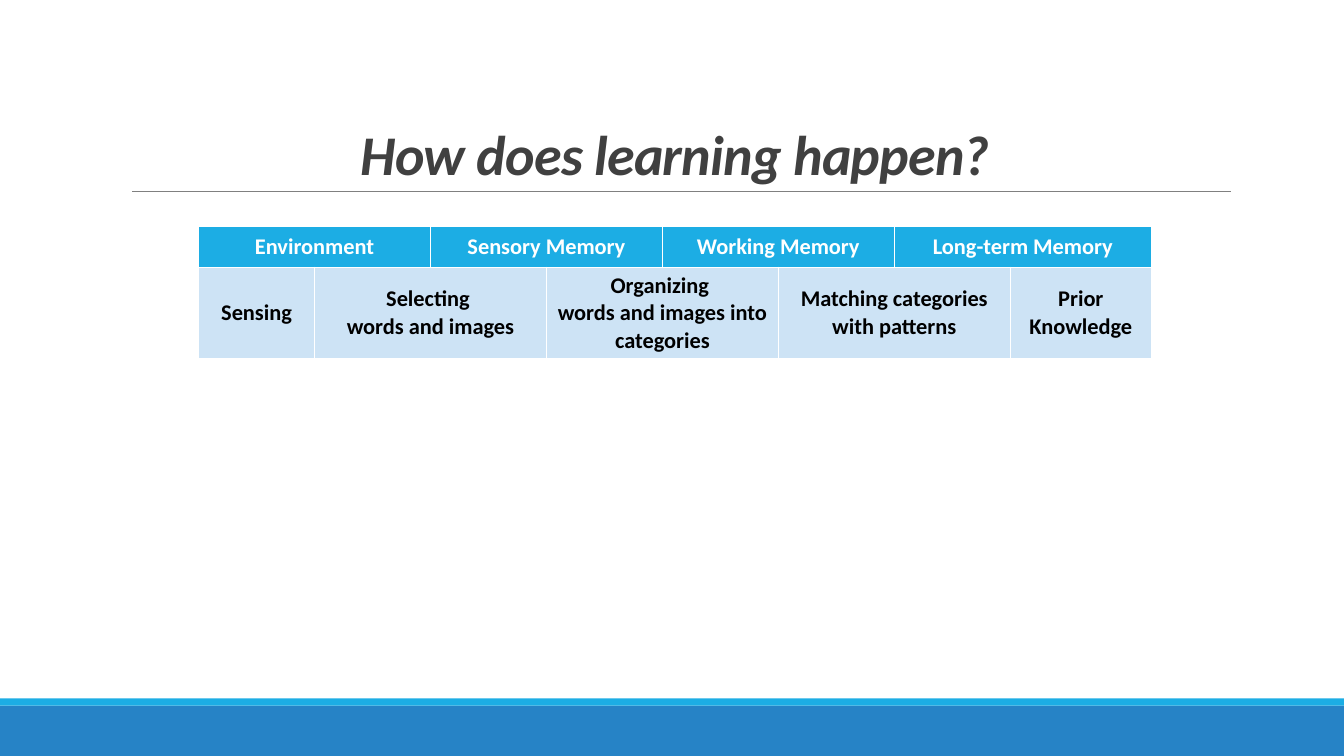
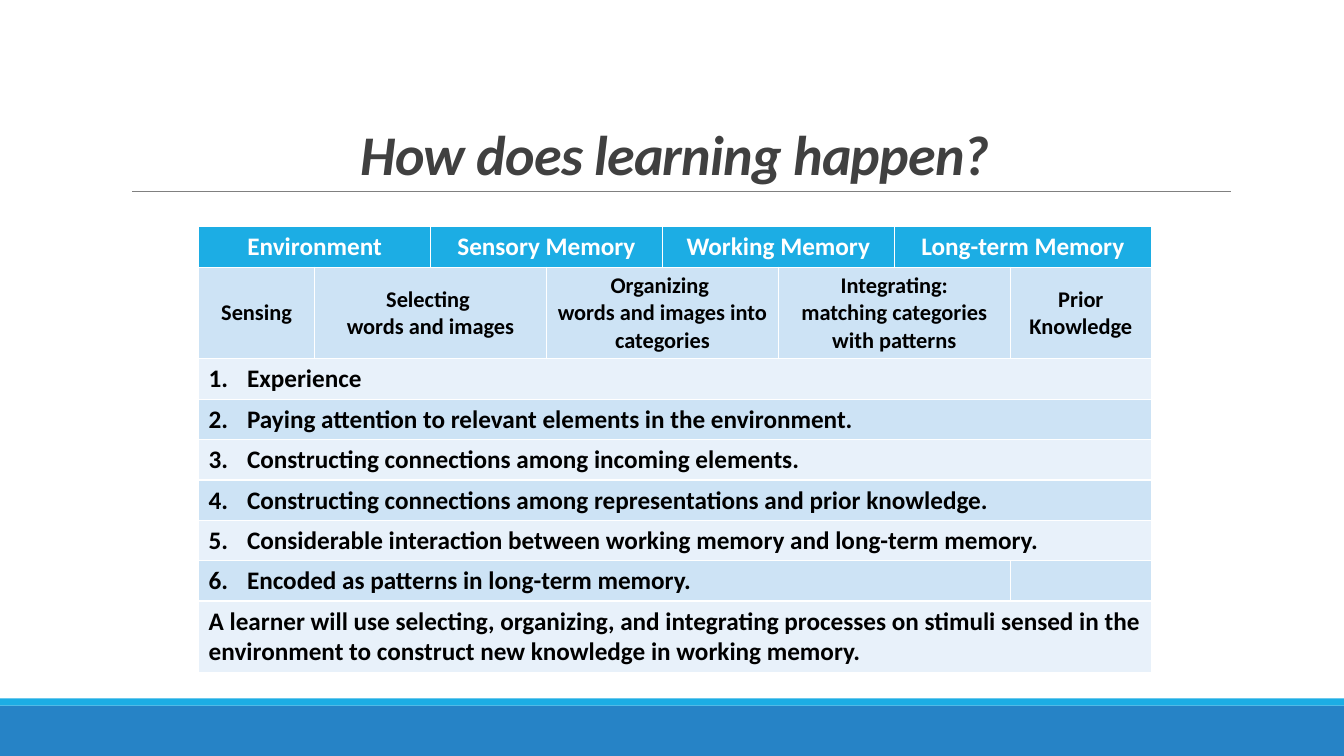
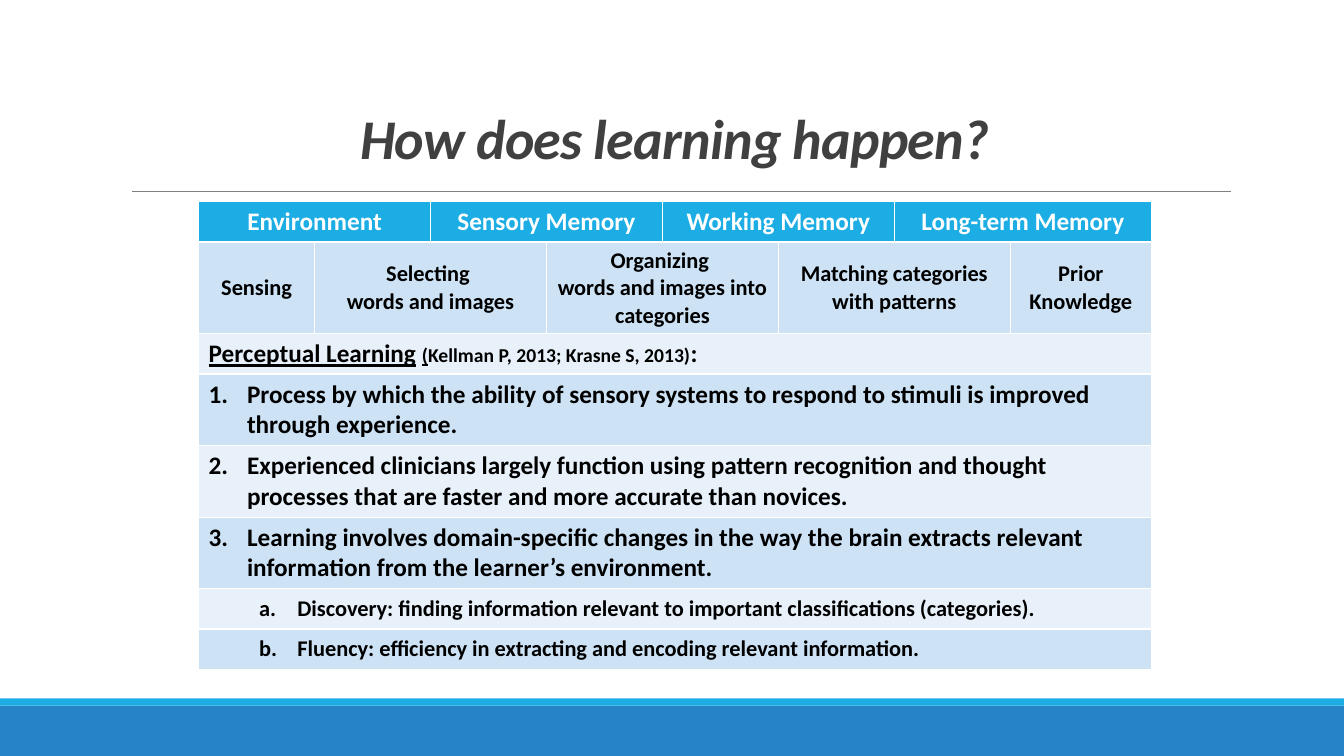
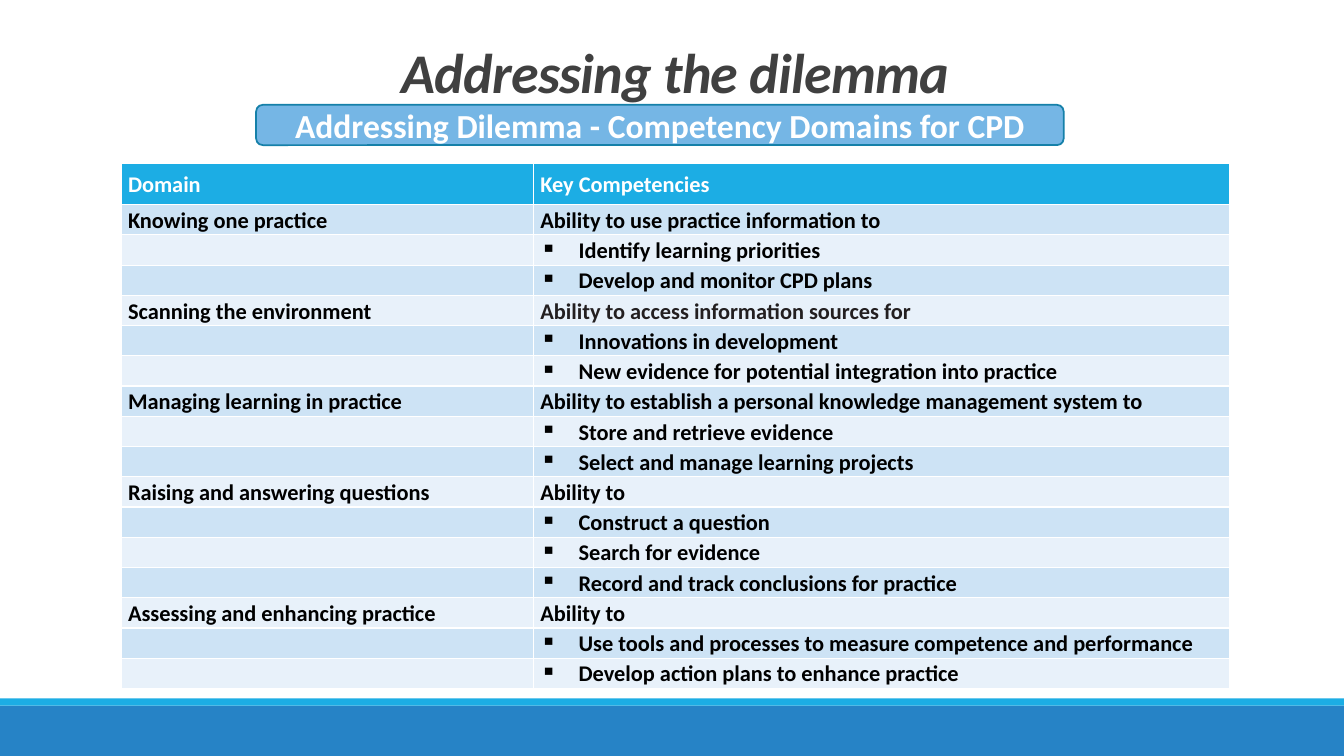
"""Builds four slides on how learning happens and on competency domains."""
import dataclasses

import lxml.etree
import pptx
import pptx.dml.color
import pptx.enum.shapes
import pptx.enum.text
import pptx.oxml.ns
import pptx.util

EMU_PER_PX = 9144
ALIGN = pptx.enum.text.PP_ALIGN
ANCHOR = pptx.enum.text.MSO_ANCHOR
SHAPE = pptx.enum.shapes.MSO_SHAPE


@dataclasses.dataclass(frozen=True)
class Theme:
    """Colours, font and type sizes of the deck."""
    font: str = "Calibri"
    footer: str = "2683C6"
    accent: str = "1CADE4"
    rule: str = "808080"
    heading: str = "404040"
    light: str = "FFFFFF"
    dark: str = "000000"
    charcoal: str = "231F20"
    bands: tuple = ("E8F1FA", "CDE3F5")
    banner: str = "75B6E5"
    banner_line: str = "1580A9"
    title_size: int = 40
    banner_size: int = 24
    large: int = 18
    medium: int = 16
    small: int = 14


@dataclasses.dataclass
class Run:
    """A piece of text with its own size and underline."""
    text: str
    size: int
    underline: bool = False


@dataclasses.dataclass
class Cell:
    """A table cell whose paragraphs are strings or lists of runs."""
    lines: tuple = ()
    size: int = 16
    span: int = 1
    centred: bool = False
    colour: str = ""
    bullet: dict = None
    level: int = 0


def px(length):
    """Turns px into EMU."""
    return pptx.util.Emu(length * EMU_PER_PX)


def rgb(colour):
    """Turns a hex string into a colour."""
    return pptx.dml.color.RGBColor.from_string(colour)


class Deck:
    """Holds the style and the current slide."""

    def __init__(self, theme):
        """Starts an empty presentation."""
        self.theme = theme
        self.presentation = pptx.Presentation()
        self.presentation.slide_width = px(1333)
        self.presentation.slide_height = px(750)
        self.slide = None

    def new_slide(self):
        """Adds a blank slide with the footer bands."""
        self.slide = self.presentation.slides.add_slide(self.presentation.slide_layouts[6])
        self.box((0, 700, 1333, 50), self.theme.footer)
        self.box((0, 693, 1333, 7), self.theme.accent)

    def box(self, place, fill, line=None, kind=SHAPE.RECTANGLE):
        """Draws a filled shape."""
        shape = self.slide.shapes.add_shape(kind, *map(px, place))
        shape.shadow.inherit = False
        shape.fill.solid()
        shape.fill.fore_color.rgb = rgb(fill)
        if line:
            shape.line.color.rgb = rgb(line)
            shape.line.width = pptx.util.Pt(1.25)
        else:
            shape.line.fill.background()
        return shape

    def rule(self):
        """Draws the thin line under the title."""
        line = self.slide.shapes.add_connector(
            pptx.enum.shapes.MSO_CONNECTOR.STRAIGHT, px(131), px(190), px(1221), px(190))
        line.line.color.rgb = rgb(self.theme.rule)
        line.line.width = pptx.util.Pt(0.5)
        lxml.etree.SubElement(line._element.spPr, pptx.oxml.ns.qn("a:effectLst"))

    def add_runs(self, paragraph, runs, colour):
        """Adds bold runs to a paragraph and returns the last one."""
        for item in runs:
            run = paragraph.add_run()
            run.text = item.text
            run.font.name = self.theme.font
            run.font.size = pptx.util.Pt(item.size)
            run.font.bold = True
            run.font.underline = item.underline
            run.font.color.rgb = rgb(colour)
        return run

    def title(self, text, place):
        """Adds the slide title, resting on the bottom of its place."""
        frame = self.slide.shapes.add_textbox(*map(px, place)).text_frame
        frame.word_wrap = True
        frame.vertical_anchor = ANCHOR.BOTTOM
        paragraph = frame.paragraphs[0]
        paragraph.alignment = ALIGN.CENTER
        paragraph.line_spacing = 0.85
        run = self.add_runs(paragraph, [Run(text, self.theme.title_size)], self.theme.heading)
        run.font.italic = True
        run.font._element.set("spc", "-50")

    def banner(self, text, place):
        """Draws a rounded box with a centred caption."""
        shape = self.box(place, self.theme.banner, self.theme.banner_line, SHAPE.ROUNDED_RECTANGLE)
        shape.text_frame.word_wrap = True
        shape.text_frame.vertical_anchor = ANCHOR.MIDDLE
        paragraph = shape.text_frame.paragraphs[0]
        paragraph.alignment = ALIGN.CENTER
        self.add_runs(paragraph, [Run(text, self.theme.banner_size)], self.theme.light)

    def bullet(self, paragraph, marker, level):
        """Gives a paragraph a hanging marker."""
        properties = paragraph._p.get_or_add_pPr()
        properties.set("marL", str(px(38 + 50 * level)))
        properties.set("indent", str(px(-38)))
        tag = "a:buChar" if "char" in marker else "a:buAutoNum"
        lxml.etree.SubElement(properties, pptx.oxml.ns.qn(tag), marker)

    def fill_cell(self, target, cell, row_index, margins, spacing):
        """Paints a table cell and adds its paragraphs."""
        theme = self.theme
        header = row_index == 0
        target.vertical_anchor = ANCHOR.MIDDLE
        target.margin_left = target.margin_right = px(margins[0])
        target.margin_top = target.margin_bottom = px(margins[1])
        target.fill.solid()
        target.fill.fore_color.rgb = rgb(theme.accent if header else theme.bands[row_index % 2])
        frame = target.text_frame
        if not cell.lines:
            frame.paragraphs[0]._p.get_or_add_endParaRPr().set("sz", str(cell.size * 100))
        for index, line in enumerate(cell.lines):
            paragraph = frame.add_paragraph() if index else frame.paragraphs[0]
            paragraph.alignment = ALIGN.CENTER if cell.centred else ALIGN.LEFT
            paragraph.line_spacing = spacing
            if cell.bullet:
                self.bullet(paragraph, cell.bullet, cell.level)
            runs = [Run(line, cell.size)] if isinstance(line, str) else line
            self.add_runs(paragraph, runs, cell.colour or (theme.light if header else theme.dark))

    def table(self, left, top, widths, rows, margins=(10, 5), spacing=None):
        """Adds a table from rows of a height and cells."""
        heights = [height for height, _ in rows]
        table = self.slide.shapes.add_table(
            len(rows), len(widths), px(left), px(top), px(sum(widths)), px(sum(heights))).table
        for column, width in zip(table.columns, widths):
            column.width = px(width)
        for row_index, (height, cells) in enumerate(rows):
            table.rows[row_index].height = px(height)
            column_index = 0
            for cell in cells:
                target = table.cell(row_index, column_index)
                column_index += cell.span
                if cell.span > 1:
                    target.merge(table.cell(row_index, column_index - 1))
                self.fill_cell(target, cell, row_index, margins, spacing)


THEME = Theme()
MEMORY_WIDTHS = [115] * 7 + [140]
MATCHING = ("Matching categories with patterns",)
STAGES = ("Environment", "Sensory Memory", "Working Memory", "Long-term Memory")
STEPS = (
    "Experience",
    "Paying attention to relevant elements in the environment.",
    "Constructing connections among incoming elements.",
    "Constructing connections among representations and prior knowledge.",
    "Considerable interaction between working memory and long-term memory.",
    "Encoded as patterns in long-term memory.",
)
SUMMARY = ("A learner will use selecting, organizing, and integrating processes on stimuli "
           "sensed in the environment to construct new knowledge in working memory.")
PERCEPTUAL = [
    Run("Perceptual Learning", THEME.large, True),
    Run(" ", THEME.large),
    Run("(", THEME.small, True),
    Run("Kellman P, 2013; Krasne S, 2013)", THEME.small),
    Run(":", THEME.large),
]
FINDINGS = (
    "Process by which the ability of sensory systems to respond to stimuli is improved "
    "through experience.",
    "Experienced clinicians largely function using pattern recognition and thought "
    "processes that are faster and more accurate than novices.",
    "Learning involves domain-specific changes in the way the brain extracts relevant "
    "information from the learner’s environment.",
)
CHANGES = (
    "Discovery: finding information relevant to important classifications (categories).",
    "Fluency: efficiency in extracting and encoding relevant information.",
)
DOMAINS = (
    ("Knowing one practice", "Ability to use practice information to", THEME.dark,
     ("Identify learning priorities", "Develop and monitor CPD plans")),
    ("Scanning the environment", "Ability to access information sources for", THEME.charcoal,
     ("Innovations in development", "New evidence for potential integration into practice")),
    ("Managing learning in practice",
     "Ability to establish a personal knowledge management system to", THEME.dark,
     ("Store and retrieve evidence", "Select and manage learning projects")),
    ("Raising and answering questions", "Ability to", THEME.dark,
     ("Construct a question", "Search for evidence",
      "Record and track conclusions for practice")),
    ("Assessing and enhancing practice", "Ability to", THEME.dark,
     ("Use tools and processes to measure competence and performance",
      "Develop action plans to enhance practice")),
)


def memory_rows(header_size, matching=MATCHING):
    """Returns the two rows that open each memory table."""
    processes = (
        (("Sensing",), 1),
        (("Selecting ", "words and images"), 2),
        (("Organizing ", "words and images into categories"), 2),
        (matching, 2),
        (("Prior Knowledge",), 1),
    )
    return [
        (40, [Cell((stage,), header_size, 2, centred=True) for stage in STAGES]),
        (91, [Cell(lines, THEME.medium, span, centred=True) for lines, span in processes]),
    ]


def numbered_rows(texts, height, size=THEME.large, style="arabicPeriod", level=0):
    """Returns full-width rows numbered in order."""
    return [
        (height, [Cell((text,), size, 8, bullet={"type": style, "startAt": str(number)},
                       level=level)])
        for number, text in enumerate(texts, 1)
    ]


def domain_rows():
    """Returns the rows of the competency table."""
    rows = [(41, [Cell(("Domain",)), Cell(("Key Competencies",))])]
    for domain, ability, colour, skills in DOMAINS:
        rows.append((30, [Cell((domain,)), Cell((ability,), colour=colour)]))
        rows += [(30, [Cell(), Cell((skill,), bullet={"char": "▪"})]) for skill in skills]
    return rows


def learning_slide(deck, rows, title_place=(120, 31, 1100, 159), top=225):
    """Builds one slide about how learning happens."""
    deck.new_slide()
    deck.rule()
    deck.title("How does learning happen?", title_place)
    deck.table(197, top, MEMORY_WIDTHS, rows)


def main():
    """Builds and saves the presentation."""
    deck = Deck(THEME)
    learning_slide(deck, memory_rows(THEME.medium))

    steps = numbered_rows(STEPS, 40)
    steps[-1][1][0].span = 7
    steps[-1][1].append(Cell())
    integrating = ("Integrating:", "matching categories with patterns")
    learning_slide(deck, memory_rows(THEME.large, integrating) + steps
                   + [(71, [Cell((SUMMARY,), THEME.large, 8)])])

    learning_slide(deck, memory_rows(THEME.large)
                   + [(40, [Cell((PERCEPTUAL,), THEME.large, 8)])]
                   + numbered_rows(FINDINGS, 71)
                   + numbered_rows(CHANGES, 40, THEME.medium, "alphaLcPeriod", 1),
                   (257, 31, 825, 144), 200)

    deck.new_slide()
    deck.title("Addressing the dilemma", (120, 14, 1100, 95))
    deck.table(120, 162, [409, 691], domain_rows(), (7, 0), 1.07)
    deck.banner("Addressing Dilemma - Competency Domains for CPD", (254, 104, 801, 40))
    deck.presentation.save("out.pptx")


if __name__ == "__main__":
    main()
